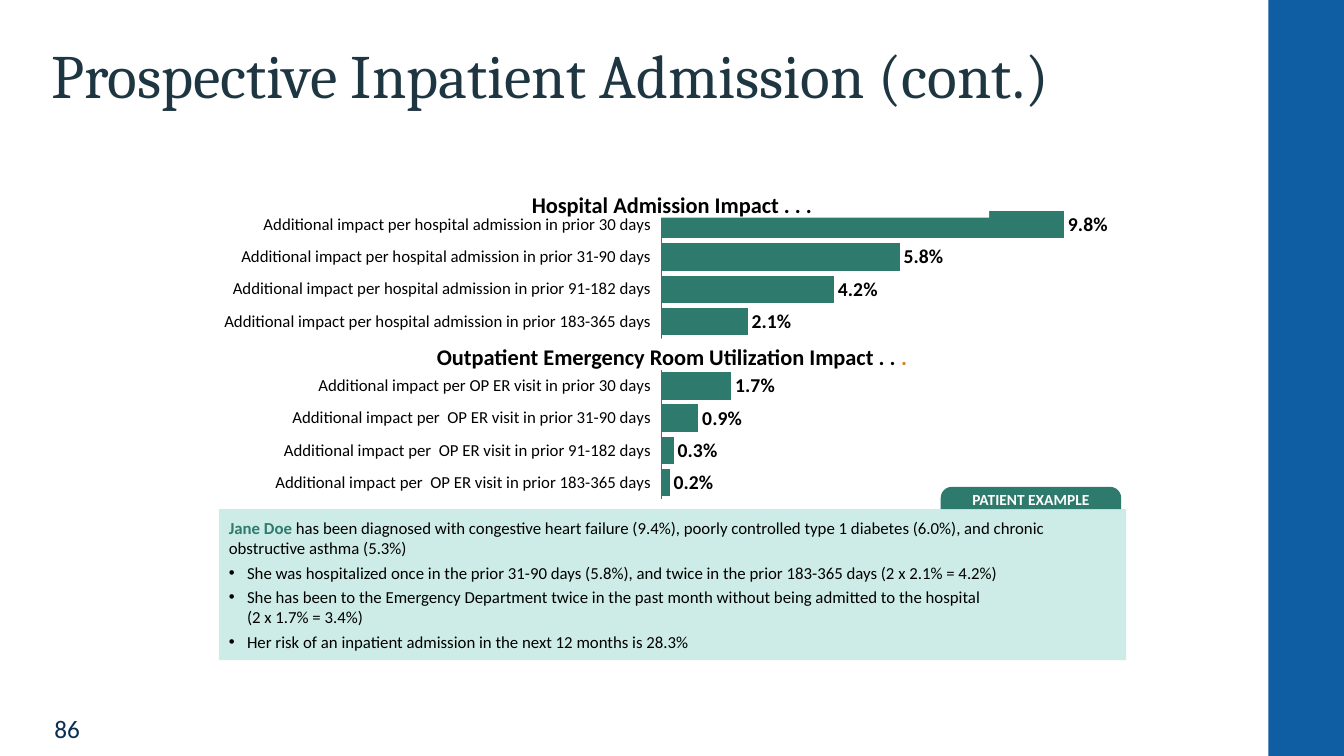
from lxml import etree
from pptx import Presentation
from pptx.chart.data import CategoryChartData
from pptx.dml.color import RGBColor
from pptx.enum.chart import XL_CHART_TYPE, XL_LABEL_POSITION, XL_TICK_LABEL_POSITION, XL_TICK_MARK
from pptx.enum.shapes import MSO_SHAPE
from pptx.enum.text import MSO_ANCHOR, MSO_AUTO_SIZE, PP_ALIGN
from pptx.oxml import parse_xml
from pptx.oxml.ns import nsdecls, qn
from pptx.util import Inches, Pt

BAR = XL_CHART_TYPE.BAR_CLUSTERED
OUTSIDE = XL_LABEL_POSITION.OUTSIDE_END
LOW = XL_TICK_LABEL_POSITION.LOW
NO_TICK = XL_TICK_MARK.NONE
RECTANGLE = MSO_SHAPE.RECTANGLE
TAB = MSO_SHAPE.ROUND_2_SAME_RECTANGLE
TOP, MIDDLE = MSO_ANCHOR.TOP, MSO_ANCHOR.MIDDLE
LEFT, CENTER = PP_ALIGN.LEFT, PP_ALIGN.CENTER
FIXED = MSO_AUTO_SIZE.NONE

COLORS = {
    "black": "000000", "white": "FFFFFF", "blue": "0F5DA3", "navy": "082E52",
    "slate": "1D3641", "green": "2E7A6D", "mint": "CDECE7", "orange": "DB821E",
}

IMPACTS = [
    ("Additional impact per hospital admission in prior 30 days", 0.098),
    ("Additional impact per hospital admission in prior 31-90 days", 0.058),
    ("Additional impact per hospital admission in prior 91-182 days", 0.042),
    ("Additional impact per hospital admission in prior 183-365 days", 0.021),
    ("", None),
    ("Additional impact per OP ER visit in prior 30 days", 0.017),
    ("Additional impact per  OP ER visit in prior 31-90 days", 0.009),
    ("Additional impact per  OP ER visit in prior 91-182 days", 0.003),
    ("Additional impact per  OP ER visit in prior 183-365 days", 0.002),
]

PATIENT_INTRO = [
    ("Jane Doe ", "green", True),
    ("has been diagnosed with congestive heart failure (9.4%), poorly controlled type 1 "
     "diabetes (6.0%), and chronic obstructive asthma (5.3%)", "black", False),
]
PATIENT_FACTS = [
    "She was hospitalized once in the prior 31-90 days (5.8%), and twice in the prior "
    "183-365 days (2 x 2.1% = 4.2%)",
    "She has been to the Emergency Department twice in the past month without being "
    "admitted to the hospital \v(2 x 1.7% = 3.4%)",
    "Her risk of an inpatient admission in the next 12 months is 28.3%",
]


class ImpactSlide:
    """Draws styled elements on one slide."""

    def __init__(self, deck):
        self.slide = deck.slides.add_slide(deck.slide_layouts[1])
        self.font, self.title_font = "Calibri", "Cambria"

    def color(self, name):
        return RGBColor.from_string(COLORS[name])

    def style(self, font, size, color, bold=False):
        font.name, font.size, font.bold = self.font, Pt(size), bold
        font.color.rgb = self.color(color)

    def place(self, shape, left, top, width, height):
        shape.left, shape.top = Inches(left), Inches(top)
        shape.width, shape.height = Inches(width), Inches(height)

    def frame(self, shape, anchor, insets=(0, 0, 0, 0)):
        frame = shape.text_frame
        frame.word_wrap, frame.auto_size = True, FIXED
        frame.vertical_anchor = anchor
        (frame.margin_left, frame.margin_top,
         frame.margin_right, frame.margin_bottom) = map(Inches, insets)
        return frame

    def add_spans(self, para, spans, size):
        for text, color, bold in spans:
            span = para.add_run()
            span.text = text
            self.style(span.font, size, color, bold)

    def title(self, text):
        shape = self.slide.shapes.title
        self.place(shape, 0.51, 0.45, 11.5, 0.91)
        frame = self.frame(shape, TOP)
        frame.text = text
        para = frame.paragraphs[0]
        para.alignment, para.line_spacing = LEFT, 0.9
        self.style(para.runs[0].font, 44, "slate")
        para.runs[0].font.name = self.title_font

    def box(self, kind, at, fill, spans=(), size=16, insets=(0, 0, 0, 0)):
        box = self.slide.shapes.add_shape(kind, *map(Inches, at))
        box.shadow.inherit = False
        box.fill.solid()
        box.fill.fore_color.rgb = self.color(fill)
        box.line.fill.background()
        para = self.frame(box, MIDDLE, insets).paragraphs[0]
        para.alignment = CENTER
        self.add_spans(para, spans, size)
        return box

    def page_number(self, text):
        box = self.slide.shapes.add_textbox(*map(Inches, (0.54, 7.01, 0.75, 0.43)))
        frame = self.frame(box, MIDDLE)
        frame.text = text
        self.style(frame.paragraphs[0].runs[0].font, 18, "navy")

    def bullet(self, para, mark):
        properties = para._p.get_or_add_pPr()
        hanging = Inches(0.18) if mark else 0
        properties.set("marL", str(hanging))
        properties.set("indent", str(-hanging))
        sign = etree.SubElement(properties, qn("a:buChar" if mark else "a:buNone"))
        if mark:
            sign.set("char", mark)

    def patient_list(self, intro, facts):
        shape = self.slide.placeholders[1]
        self.place(shape, 2.17, 5.05, 9, 1.5)
        shape.fill.solid()
        shape.fill.fore_color.rgb = self.color("mint")
        frame = self.frame(shape, MIDDLE, (0.1, 0.05, 0.1, 0.05))
        frame.text = "\n".join(["", *facts])
        self.add_spans(frame.paragraphs[0], intro, 12)
        for index, para in enumerate(frame.paragraphs):
            self.bullet(para, "•" if index else None)
            para.alignment = LEFT
            para.space_before, para.space_after = Pt(0), Pt(3)
            if index:
                for span in para.runs:
                    self.style(span.font, 12, "black")

    def chart(self, rows, at):
        data = CategoryChartData(number_format="0.0%")
        data.categories = [label for label, _ in rows]
        data.add_series("Series 1", [value for _, value in rows])
        chart = self.slide.shapes.add_chart(BAR, *map(Inches, at), data).chart
        chart.has_legend = chart.has_title = False
        self.style(chart.font, 18, "black")

        labels_axis, values_axis = chart.category_axis, chart.value_axis
        labels_axis.reverse_order = True
        labels_axis.major_tick_mark = labels_axis.minor_tick_mark = NO_TICK
        labels_axis.tick_label_position = LOW
        labels_axis.format.line.color.rgb = self.color("green")
        labels_axis.format.line.width = Pt(0.75)
        self.style(labels_axis.tick_labels.font, 12, "black")
        values_axis.visible = values_axis.has_major_gridlines = False
        values_axis.minimum_scale, values_axis.maximum_scale = 0, 0.12

        plot = chart.plots[0]
        plot.gap_width, plot.vary_by_categories = 18, False
        bars = plot.series[0]
        bars.format.fill.solid()
        bars.format.fill.fore_color.rgb = self.color("green")
        labels = bars.data_labels
        labels.show_value, labels.position = True, OUTSIDE
        labels.number_format, labels.number_format_is_linked = "0.0%", False
        self.style(labels.font, 14, "black", True)
        self.plot_area(chart, x=0.467, y=0.02, w=0.511, h=0.96)

    def plot_area(self, chart, **sides):
        area = chart._chartSpace.chart.plotArea
        for old in area.findall(qn("c:layout")):
            area.remove(old)
        modes = '<c:layoutTarget val="inner"/><c:xMode val="edge"/><c:yMode val="edge"/>'
        sizes = "".join(f'<c:{side} val="{share}"/>' for side, share in sides.items())
        area.insert(0, parse_xml(
            f'<c:layout {nsdecls("c")}><c:manualLayout>{modes}{sizes}</c:manualLayout></c:layout>'))


def main():
    deck = Presentation()
    deck.slide_width, deck.slide_height = Inches(13.33), Inches(7.5)
    page = ImpactSlide(deck)
    page.box(RECTANGLE, (12.58, 0, 0.75, 7.5), "blue")
    page.page_number("86")
    page.title("Prospective Inpatient Admission (cont.)")
    page.chart(IMPACTS, (2.09, 2.01, 9.57, 3))
    page.patient_list(PATIENT_INTRO, PATIENT_FACTS)
    tab = page.box(TAB, (9.33, 4.83, 1.79, 0.22), "green",
                   [("PATIENT EXAMPLE", "white", True)], 11)
    tab.adjustments[0] = 0.5
    page.box(RECTANGLE, (3.52, 1.89, 6.29, 0.27), "white",
             [("Hospital Admission Impact . . .", "black", True)])
    page.box(RECTANGLE, (3.52, 3.36, 6.29, 0.31), "white",
             [("Outpatient Emergency Room Utilization Impact . . ", "black", True),
              (".", "orange", True)], insets=(0.1, 0.04, 0.1, 0))
    deck.save("out.pptx")


if __name__ == "__main__":
    main()
